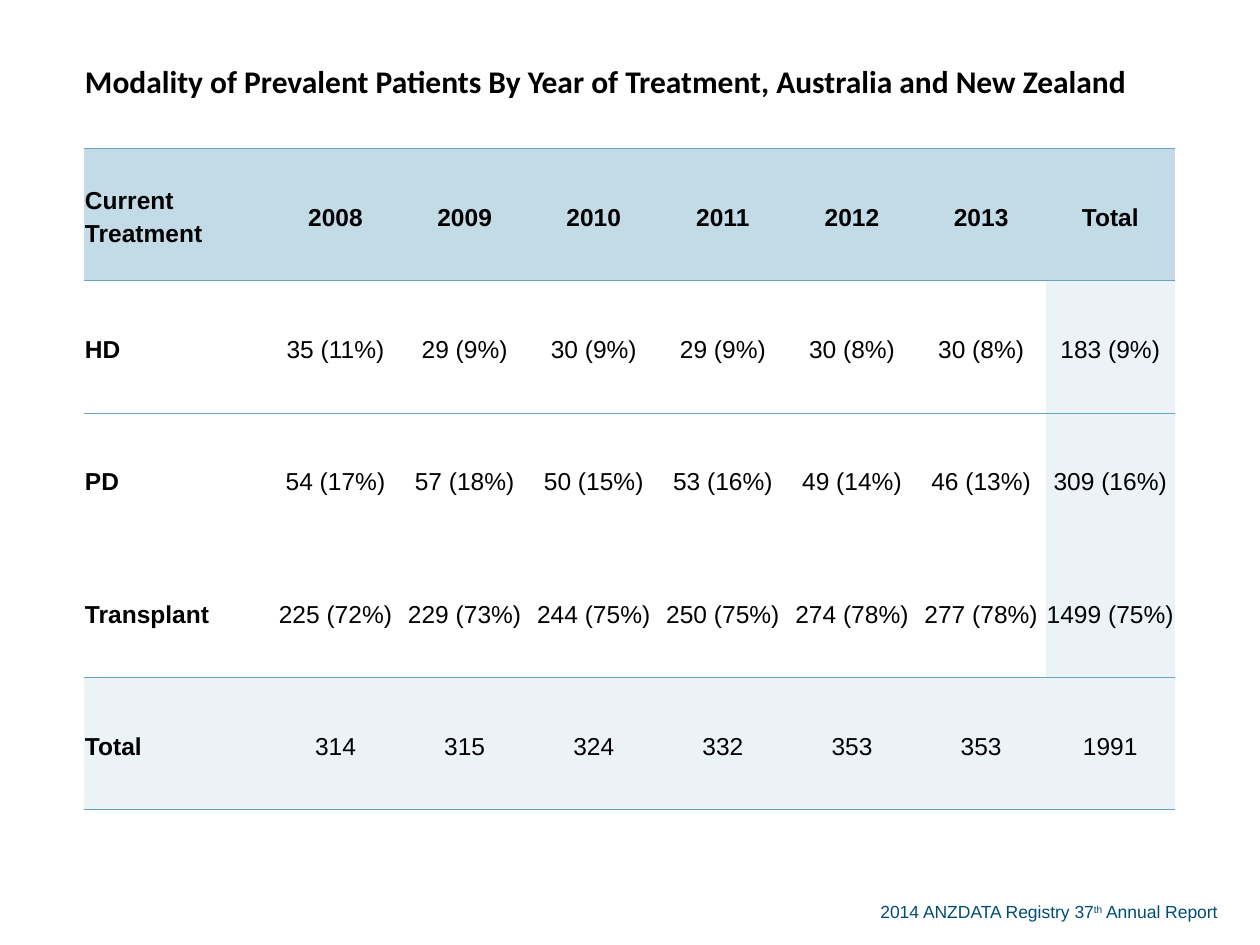
from lxml import etree
from pptx import Presentation
from pptx.dml.color import RGBColor
from pptx.enum.text import MSO_ANCHOR, PP_ALIGN
from pptx.oxml.ns import qn
from pptx.util import Pt

MIDDLE = MSO_ANCHOR.MIDDLE
LEFT, CENTER = PP_ALIGN.LEFT, PP_ALIGN.CENTER

HEADER_FILL, TOTAL_FILL, RULE = "C2DBE7", "EBF3F7", "66A3C2"
BLACK, FOOTER_BLUE = "000000", "004D73"
NO_GRID_STYLE = "{2D5ABB26-0587-4C30-8999-92F81FD0307C}"

TITLE = "Modality of Prevalent Patients By Year of Treatment, Australia and New Zealand"
ROWS = [
    ["Current Treatment", "2008", "2009", "2010", "2011", "2012", "2013", "Total"],
    ["HD", "35 (11%)", "29 (9%)", "30 (9%)", "29 (9%)", "30 (8%)", "30 (8%)", "183 (9%)"],
    ["PD", "54 (17%)", "57 (18%)", "50 (15%)", "53 (16%)", "49 (14%)", "46 (13%)", "309 (16%)"],
    ["Transplant", "225 (72%)", "229 (73%)", "244 (75%)", "250 (75%)", "274 (78%)",
     "277 (78%)", "1499 (75%)"],
    ["Total", "314", "315", "324", "332", "353", "353", "1991"],
]
RULES_BELOW = {0, 1, 4, 5}


def px(length):
    return round(length * 914400 / 126)


def color(hex_value):
    return RGBColor.from_string(hex_value)


def set_font(font, name, size, hex_value, bold=False):
    font.name, font.size, font.bold = name, Pt(size), bold
    font.color.rgb = color(hex_value)


def add_border(cell, tag):
    properties = cell._tc.get_or_add_tcPr()
    line = etree.SubElement(properties, qn(tag), w=str(Pt(0.5)))
    fill = etree.SubElement(line, qn("a:solidFill"))
    etree.SubElement(fill, qn("a:srgbClr"), val=RULE)


def style_cell(cell, row, fill):
    """Set margins, rules and fill; borders must come before the fill."""
    cell.margin_left = cell.margin_right = cell.margin_top = px(1)
    cell.margin_bottom = 0
    cell.vertical_anchor = MIDDLE
    if row - 1 in RULES_BELOW:
        add_border(cell, "a:lnT")
    if row in RULES_BELOW:
        add_border(cell, "a:lnB")
    if fill:
        cell.fill.solid()
        cell.fill.fore_color.rgb = color(fill)
    else:
        cell.fill.background()


def add_modality_table(slide, left, top, width, height):
    row_count, column_count = len(ROWS) + 1, len(ROWS[0])
    frame = slide.shapes.add_table(row_count, column_count,
                                   px(left), px(top), px(width), px(height))
    table = frame.table
    table.first_row = table.horz_banding = False
    table._tbl.tblPr.find(qn("a:tableStyleId")).text = NO_GRID_STYLE

    label_width = 187
    for index, column in enumerate(table.columns):
        column.width = px((width - label_width) / (column_count - 1) if index else label_width)
    for row in table.rows:
        row.height = px(height / row_count)

    for column in range(column_count):
        style_cell(table.cell(0, column), 0, None)
    title = table.cell(0, 0)
    title.merge(table.cell(0, column_count - 1))
    title.text = TITLE
    set_font(title.text_frame.paragraphs[0].font, "Calibri", 18, BLACK, True)

    last_row, last_column = row_count - 1, column_count - 1
    for row, values in enumerate(ROWS, start=1):
        for column, value in enumerate(values):
            cell = table.cell(row, column)
            is_total = row == last_row or column == last_column
            fill = HEADER_FILL if row == 1 else TOTAL_FILL if is_total else None
            style_cell(cell, row, fill)
            cell.text = value
            paragraph = cell.text_frame.paragraphs[0]
            paragraph.alignment = CENTER if column else LEFT
            paragraph.line_spacing = 1.19
            paragraph.space_after = Pt(14)
            set_font(paragraph.font, "Arial", 14, BLACK, row == 1 or column == 0)


def add_footer(slide, left, top, width, height):
    box = slide.shapes.add_textbox(px(left), px(top), px(width), px(height))
    box.text_frame.word_wrap = True
    paragraph = box.text_frame.paragraphs[0]
    set_font(paragraph.font, "Arial", 10, FOOTER_BLUE)
    for text in ("2014 ANZDATA Registry 37", "th", " Annual Report"):
        run = paragraph.add_run()
        run.text = text
        if text == "th":
            run.font._element.set("baseline", "30000")


def main():
    presentation = Presentation()
    presentation.slide_width, presentation.slide_height = px(1260), px(945)
    slide = presentation.slides.add_slide(presentation.slide_layouts[6])
    add_footer(slide, 868, 895, 377, 34)
    add_modality_table(slide, 84, 16, 1091, 794)
    presentation.save("out.pptx")


if __name__ == "__main__":
    main()
